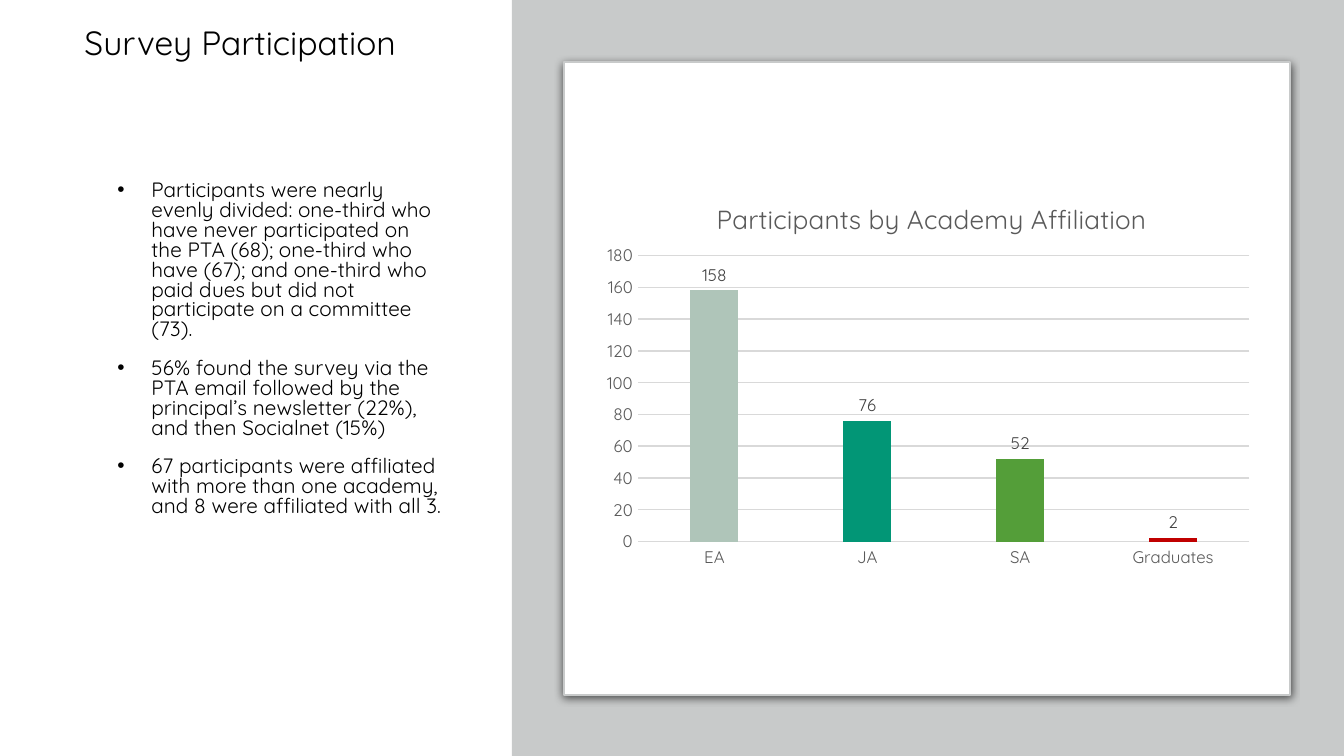
from lxml import etree
from pptx import Presentation
from pptx.chart.data import CategoryChartData
from pptx.dml.color import RGBColor
from pptx.enum.chart import XL_CHART_TYPE, XL_LABEL_POSITION, XL_TICK_MARK
from pptx.enum.shapes import MSO_SHAPE
from pptx.enum.text import MSO_ANCHOR, MSO_AUTO_SIZE, PP_ALIGN
from pptx.oxml import parse_xml
from pptx.oxml.ns import nsdecls, qn
from pptx.util import Pt

COLUMN = XL_CHART_TYPE.COLUMN_CLUSTERED
OUTSIDE = XL_LABEL_POSITION.OUTSIDE_END
NO_TICK = XL_TICK_MARK.NONE
RECTANGLE, ROUNDED = MSO_SHAPE.RECTANGLE, MSO_SHAPE.ROUNDED_RECTANGLE
TOP, LEFT, NO_FIT = MSO_ANCHOR.TOP, PP_ALIGN.LEFT, MSO_AUTO_SIZE.NONE

SCALE = 914400 / 134.4
FONT = "Quicksand"
COLORS = {"text": "000000", "panel": "C8CACA", "card": "FFFFFF",
          "axis": "595959", "grid": "D9D9D9", "label": "404040",
          "series": "549E39"}

TITLE = "Survey Participation"
FINDINGS = [
    "Participants were nearly evenly divided: one-third who have never "
    "participated on the PTA (68); one-third who have (67); and one-third "
    "who paid dues but did not participate on a committee (73).",
    "56% found the survey via the PTA email followed by the principal’s "
    "newsletter (22%), and then Socialnet (15%)",
    "67 participants were affiliated with more than one academy, and 8 were "
    "affiliated with all 3.",
]
CHART_TITLE = "Participants by Academy Affiliation"
ACADEMIES = [("EA", 158, "AFC5B9"), ("JA", 76, "029676"),
             ("SA", 52, "549E39"), ("Graduates", 2, "C00000")]

TITLE_BOX = (71, 20, 387, 60)
FINDINGS_BOX = (71, 175, 387, 417)
PANEL_BOX = (512, 0, 832, 756)
CARD_BOX = (564, 62, 726, 633)
CHART_BOX = (591, 175, 672, 403)
TITLE_LAYOUT = {"x": 0.18, "y": 0.05}
PLOT_LAYOUT = {"x": 0.07, "y": 0.2, "w": 0.91, "h": 0.71}


def px(value):
    return round(value * SCALE)


def color(name):
    return RGBColor.from_string(COLORS[name])


def format_font(font, size, color_name):
    font.name, font.size, font.bold = FONT, Pt(size), False
    font.color.rgb = color(color_name)


def write_text(shape, lines, size, spacing, before=0, indent=0, hanging=0):
    frame = shape.text_frame
    frame.word_wrap = True
    frame.auto_size = NO_FIT
    frame.vertical_anchor = TOP
    for index, line in enumerate(lines):
        paragraph = frame.add_paragraph() if index else frame.paragraphs[0]
        paragraph.alignment = LEFT
        paragraph.line_spacing = spacing
        paragraph.space_before = Pt(before)
        properties = paragraph._p.get_or_add_pPr()
        properties.set("marL", str(px(indent)))
        properties.set("indent", str(-px(hanging)))
        run = paragraph.add_run()
        run.text = line
        format_font(run.font, size, "text")


def place(shape, box):
    shape.left, shape.top, shape.width, shape.height = map(px, box)


def add_block(slide, kind, box, fill):
    shape = slide.shapes.add_shape(kind, *map(px, box))
    shape.shadow.inherit = False
    shape.fill.solid()
    shape.fill.fore_color.rgb = color(fill)
    shape.line.fill.background()
    return shape


def add_card(slide):
    card = add_block(slide, ROUNDED, CARD_BOX, "card")
    card.adjustments[0] = 0
    card.line.color.rgb = color("panel")
    card.line.width = Pt(0.75)
    effects = card._element.spPr.find(qn("a:effectLst"))
    effects.append(parse_xml(
        f'<a:outerShdw {nsdecls("a")} blurRad="{Pt(4.5)}" dist="{Pt(1.5)}" '
        'dir="5400000" algn="ctr" rotWithShape="0"><a:srgbClr val="000000">'
        '<a:alpha val="63000"/></a:srgbClr></a:outerShdw>'))


def set_layout(element, fractions, position, inner=False):
    layout = element.find(qn("c:layout"))
    if layout is None:
        layout = etree.Element(qn("c:layout"))
        element.insert(position, layout)
    manual = etree.SubElement(layout, qn("c:manualLayout"))
    if inner:
        etree.SubElement(manual, qn("c:layoutTarget"), val="inner")
    for key in ("x", "y"):
        etree.SubElement(manual, qn(f"c:{key}Mode"), val="edge")
    for key, value in fractions.items():
        etree.SubElement(manual, qn(f"c:{key}"), val=str(value))


def add_chart(slide):
    names, values, fills = zip(*ACADEMIES)
    data = CategoryChartData()
    data.categories = names
    data.add_series("Series 1", values)
    chart = slide.shapes.add_chart(COLUMN, *map(px, CHART_BOX), data).chart
    format_font(chart.font, 10, "text")
    chart.has_legend = False
    chart.has_title = True
    title = chart.chart_title
    title.text_frame.text = CHART_TITLE
    format_font(title.text_frame.paragraphs[0].runs[0].font, 14, "axis")
    set_layout(title._element, TITLE_LAYOUT, 1)
    set_layout(chart._chartSpace.chart.plotArea, PLOT_LAYOUT, 0, inner=True)

    for axis in (chart.category_axis, chart.value_axis):
        axis.major_tick_mark = axis.minor_tick_mark = NO_TICK
        format_font(axis.tick_labels.font, 9, "axis")
    value_axis = chart.value_axis
    value_axis.minimum_scale, value_axis.maximum_scale = 0, 180
    value_axis.major_unit = 20
    value_axis.format.line.fill.background()
    for line in (chart.category_axis.format.line,
                 value_axis.major_gridlines.format.line):
        line.color.rgb = color("grid")
        line.width = Pt(0.75)

    plot = chart.plots[0]
    plot.gap_width, plot.overlap, plot.vary_by_categories = 219, -27, False
    series = plot.series[0]
    series.format.fill.solid()
    series.format.fill.fore_color.rgb = color("series")
    for index, fill in enumerate(fills):
        point_fill = series.points[index].format.fill
        point_fill.solid()
        point_fill.fore_color.rgb = RGBColor.from_string(fill)
    labels = series.data_labels
    labels.show_value = True
    labels.position = OUTSIDE
    format_font(labels.font, 9, "label")


def main():
    presentation = Presentation()
    presentation.slide_width, presentation.slide_height = px(1344), px(756)
    slide = presentation.slides.add_slide(presentation.slide_layouts[1])
    title, findings = slide.placeholders
    place(title, TITLE_BOX)
    write_text(title, [TITLE], 18, 0.9)
    place(findings, FINDINGS_BOX)
    write_text(findings, FINDINGS, 11.1, 0.8, before=10, indent=67, hanging=34)
    add_block(slide, RECTANGLE, PANEL_BOX, "panel")
    add_card(slide)
    add_chart(slide)
    presentation.save("out.pptx")


if __name__ == "__main__":
    main()
